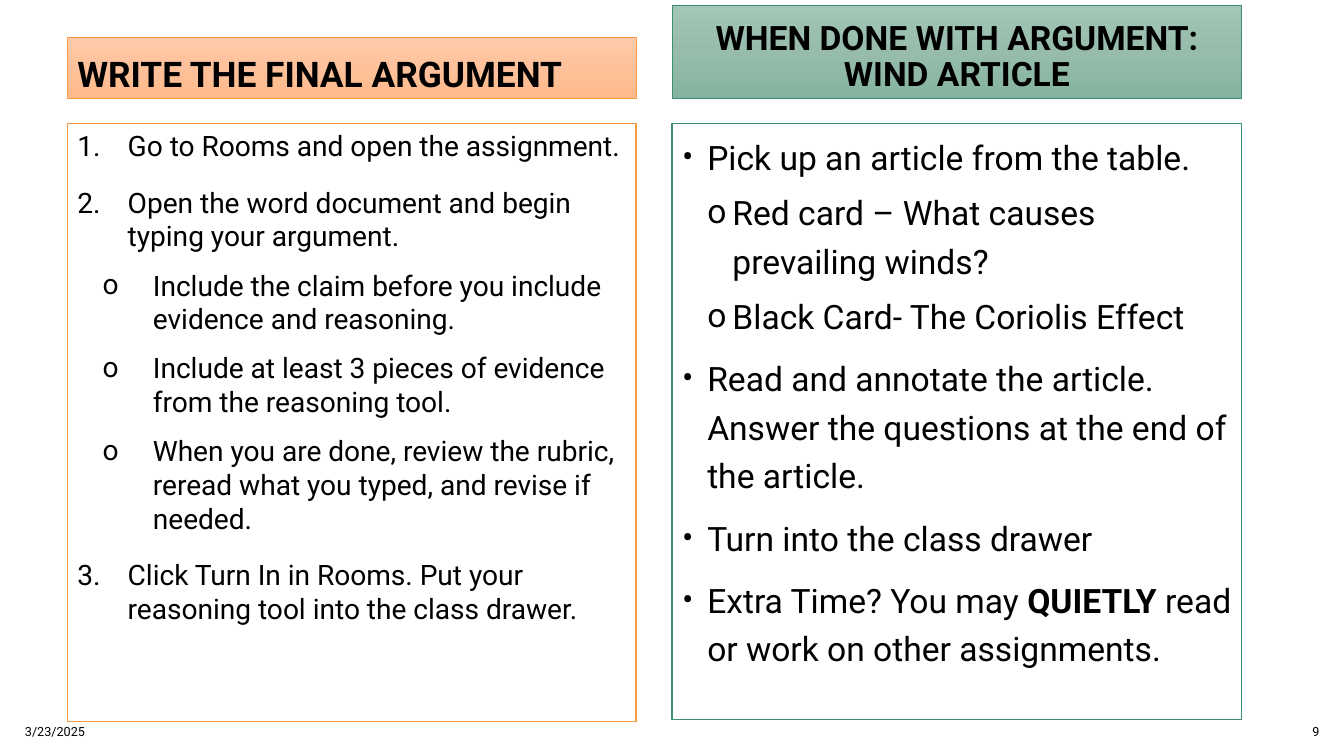
"""Build a two-panel classroom slide with assignment steps and follow-up work."""
from copy import deepcopy
from dataclasses import dataclass

from pptx import Presentation
from pptx.dml.color import RGBColor as RGB
from pptx.enum.shapes import MSO_SHAPE as SHAPE
from pptx.enum.text import MSO_ANCHOR as ANCHOR, PP_ALIGN as ALIGN
from pptx.oxml.ns import qn
from pptx.util import Cm, Pt

STEPS = [
    (0, [("Go to Rooms and open the assignment.", False)]),
    (0, [("Open the word document and begin typing your argument.", False)]),
    (2, [("Include the claim before you include evidence and reasoning.", False)]),
    (2, [("Include at least 3 pieces of evidence from the reasoning tool.", False)]),
    (2, [("When you are done, review the rubric, reread what you typed, "
          "and revise if needed.", False)]),
    (0, [("Click Turn In in Rooms. Put your reasoning tool into the class drawer.", False)]),
]
FOLLOW_UP = [
    (0, [("Pick up an article from the table.", False)]),
    (1, [("Red card – What causes prevailing winds?", False)]),
    (1, [("Black Card- The Coriolis Effect", False)]),
    (0, [("Read and annotate the article. Answer the questions at the end "
          "of the article.", False)]),
    (0, [("Turn into the class drawer", False)]),
    (0, [("Extra Time? You may ", False), ("QUIETLY", True),
         (" read or work on other assignments.", False)]),
]
PANELS = [
    dict(title="WRITE THE FINAL ARGUMENT", align=ALIGN.LEFT, title_size=25.2,
         title_spacing=0.7, left=1.7, width=14.33, head=1.55, body=15.06,
         line="FA9A42", shades=("FFCBAA", "FEC19B", "FFB989"),
         items=STEPS, size=20.1, spacing=1.0, after=6, hang=1.27, numbered=True),
    dict(title="WHEN DONE WITH ARGUMENT: WIND ARTICLE", align=ALIGN.CENTER, title_size=24,
         title_spacing=0.9, left=16.94, width=14.35, head=2.36, body=15.01,
         line="3D9072", shades=("A3C6B6", "97BCAB", "84B49F"),
         items=FOLLOW_UP, size=24, spacing=1.2, after=0, hang=0.635, numbered=False),
]
FOOTERS = [("3/23/2025", 0.38, 9.7, ALIGN.LEFT), ("9", 32.31, 1.19, ALIGN.RIGHT)]
HEAD_BOTTOM, BODY_TOP, FOOTER_TOP, FOOTER_HEIGHT = 2.49, 3.12, 17.93, 1.02
INDENT = 0.635


@dataclass(frozen=True)
class Theme:
    font: str = "Roboto"
    ink: str = "000000"
    paper: str = "FFFFFF"
    footer_size: float = 9
    head_line: float = 0.5
    body_line: float = 1


THEME = Theme()


def add_run(p, text, size, bold=False):
    r = p.add_run()
    r.text = text
    r.font.name, r.font.size, r.font.bold = THEME.font, Pt(size), bold
    r.font.color.rgb = RGB.from_string(THEME.ink)


def space(p, line, before, after):
    p.line_spacing, p.space_before, p.space_after = line, Pt(before), Pt(after)


def add_box(slide, left, top, width, height, line, weight, anchor):
    sp = slide.shapes.add_shape(SHAPE.RECTANGLE, Cm(left), Cm(top), Cm(width), Cm(height))
    sp.shadow.inherit = False
    sp.line.color.rgb = RGB.from_string(line)
    sp.line.width = Pt(weight)
    sp.text_frame.word_wrap = True
    sp.text_frame.vertical_anchor = anchor
    return sp


def shade(sp, colors):
    sp.fill.gradient()
    sp.fill.gradient_angle = 270
    stops = sp._element.spPr.find(qn("a:gradFill")).find(qn("a:gsLst"))
    stops.insert(1, deepcopy(stops[0]))
    for i, (stop, color) in enumerate(zip(sp.fill.gradient_stops, colors)):
        stop.position = i / (len(colors) - 1)
        stop.color.rgb = RGB.from_string(color)


def add_bullet(p, level, hang, numbered):
    pPr = p._p.get_or_add_pPr()
    pPr.set("marL", str(Cm(hang + level * INDENT / (2 if numbered else 1))))
    pPr.set("indent", str(-Cm(hang)))
    font = pPr.makeelement(qn("a:buFont"), {"typeface": THEME.font})
    if numbered and level == 0:
        mark = pPr.makeelement(qn("a:buAutoNum"), {"type": "arabicPeriod"})
    else:
        mark = pPr.makeelement(qn("a:buChar"), {"char": "o" if level else "•"})
    pPr.extend([font, mark])


def add_panel(slide, d):
    sp = add_box(slide, d["left"], HEAD_BOTTOM - d["head"], d["width"], d["head"],
                 d["line"], THEME.head_line, ANCHOR.BOTTOM)
    shade(sp, d["shades"])
    p = sp.text_frame.paragraphs[0]
    p.alignment = d["align"]
    space(p, d["title_spacing"], 10, 0)
    add_run(p, d["title"], d["title_size"], True)

    sp = add_box(slide, d["left"], BODY_TOP, d["width"], d["body"],
                 d["line"], THEME.body_line, ANCHOR.TOP)
    sp.fill.solid()
    sp.fill.fore_color.rgb = RGB.from_string(THEME.paper)
    tf = sp.text_frame
    for i, (level, runs) in enumerate(d["items"]):
        p = tf.add_paragraph() if i else tf.paragraphs[0]
        p.level, p.alignment = level, ALIGN.LEFT
        space(p, d["spacing"], 5 if level else 10, d["after"])
        add_bullet(p, level, d["hang"], d["numbered"])
        for text, bold in runs:
            add_run(p, text, d["size"], bold)


def add_footer(slide, text, left, width, align):
    tf = slide.shapes.add_textbox(Cm(left), Cm(FOOTER_TOP), Cm(width),
                                  Cm(FOOTER_HEIGHT)).text_frame
    tf.word_wrap, tf.vertical_anchor = True, ANCHOR.MIDDLE
    p = tf.paragraphs[0]
    p.alignment = align
    space(p, 1.0, 0, 6)
    add_run(p, text, THEME.footer_size)


def main():
    prs = Presentation()
    prs.slide_width, prs.slide_height = Cm(33.87), Cm(19.05)
    slide = prs.slides.add_slide(prs.slide_layouts[6])
    for panel in PANELS:
        add_panel(slide, panel)
    for footer in FOOTERS:
        add_footer(slide, *footer)
    prs.save("out.pptx")


if __name__ == "__main__":
    main()
